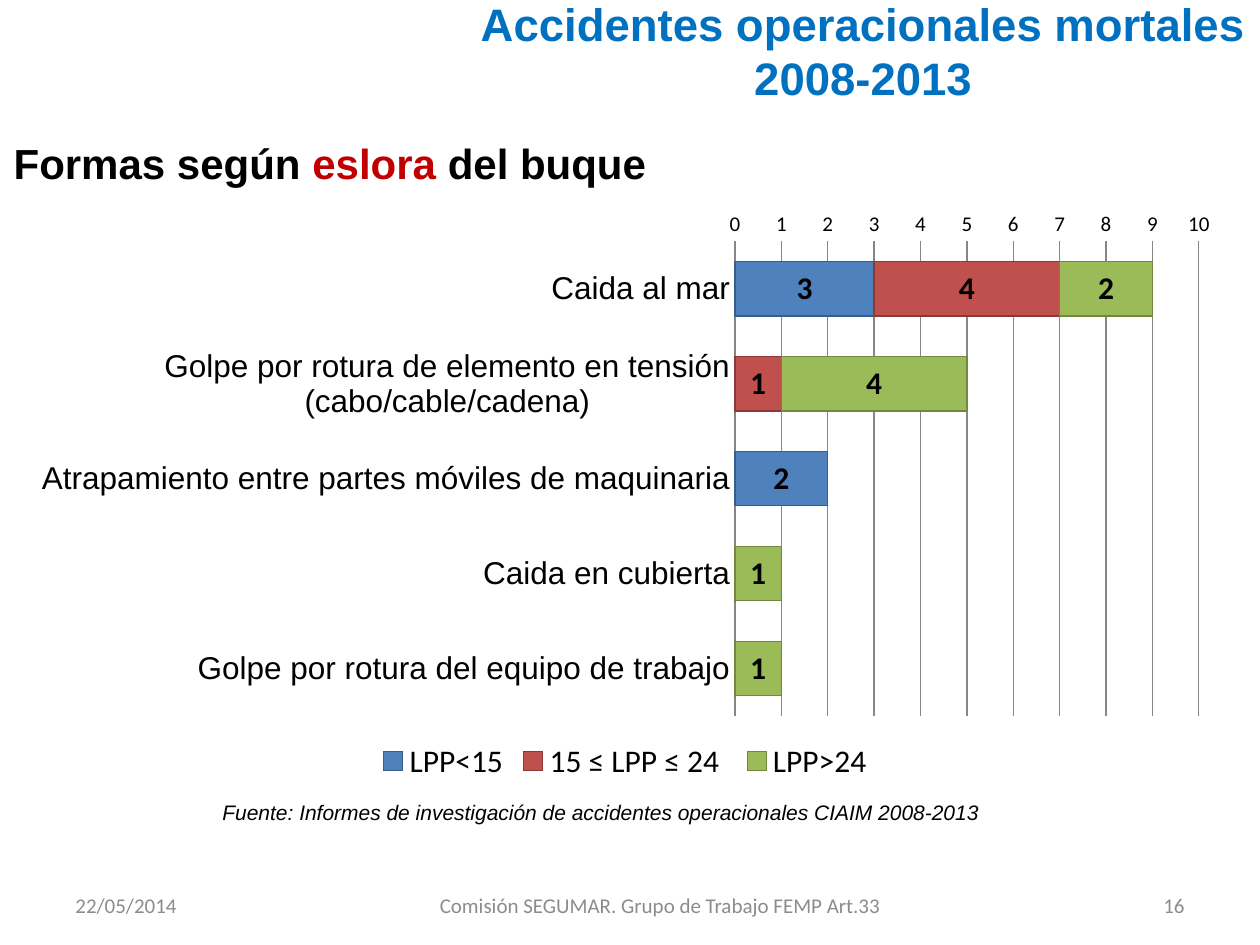
from lxml import etree
from pptx import Presentation
from pptx.chart.data import CategoryChartData
from pptx.dml.color import RGBColor
from pptx.enum.chart import XL_CHART_TYPE as ChartType, XL_LEGEND_POSITION as LegendPosition
from pptx.enum.chart import XL_TICK_MARK as TickMark
from pptx.enum.text import MSO_ANCHOR as Anchor, PP_ALIGN as Align
from pptx.oxml.ns import qn
from pptx.util import Pt

TITLE = ["Accidentes operacionales mortales", "2008-2013"]
SUBTITLE = [("Formas según ", "000000"), ("eslora", "C00000"), (" del buque", "000000")]
SOURCE = "Fuente: Informes de investigación de accidentes operacionales CIAIM 2008-2013"
# Footer: text, left, width, alignment
FOOTER = [
    ("22/05/2014", 36, 168, Align.LEFT),
    ("Comisión SEGUMAR. Grupo de Trabajo FEMP Art.33", 235.5, 283.5, Align.CENTER),
    ("16", 592.5, 91.5, Align.RIGHT),
]
CATEGORIES = [
    "Caida al mar",
    "Golpe por rotura de elemento en tensión (cabo/cable/cadena)",
    "Atrapamiento entre partes móviles de maquinaria",
    "Caida en cubierta",
    "Golpe por rotura del equipo de trabajo",
]
# Series: name, values, fill, outline
SERIES = [
    ("LPP<15", (3, 0, 2, 0, 0), "4F81BD", "385D8A"),
    ("15 ≤ LPP ≤ 24 ", (4, 1, 0, 0, 0), "C0504D", "8C3836"),
    ("LPP>24", (2, 4, 0, 1, 1), "9BBB59", "71893F"),
]
PLOT_AREA = {"x": 0.59, "y": 0.07, "w": 0.38, "h": 0.81}


def color(value):
    return RGBColor.from_string(value)


def set_font(font, size, name="Calibri", fill="000000", bold=False, italic=False):
    font.size, font.name = Pt(size), name
    font.bold, font.italic = bold, italic
    font.color.rgb = color(fill)


def add_text(slide, box, lines, size, name="Arial", align=Align.LEFT,
             anchor=Anchor.TOP, wrap=True, bold=False, italic=False):
    """Each line is a list of (text, colour) runs."""
    frame = slide.shapes.add_textbox(*map(Pt, box)).text_frame
    frame.word_wrap, frame.vertical_anchor = wrap, anchor
    for index, runs in enumerate(lines):
        paragraph = frame.add_paragraph() if index else frame.paragraphs[0]
        paragraph.alignment = align
        for text, fill in runs:
            run = paragraph.add_run()
            run.text = text
            set_font(run.font, size, name, fill, bold, italic)


def place_plot_area(chart):
    plot_area = chart._chartSpace.chart.plotArea
    for old in plot_area.findall(qn("c:layout")):
        plot_area.remove(old)
    layout = etree.Element(qn("c:layout"))
    manual = etree.SubElement(layout, qn("c:manualLayout"))
    settings = [("layoutTarget", "inner"), ("xMode", "edge"), ("yMode", "edge")]
    for tag, value in settings + list(PLOT_AREA.items()):
        etree.SubElement(manual, qn("c:" + tag)).set("val", str(value))
    plot_area.insert(0, layout)


def add_accident_chart(slide):
    data = CategoryChartData()
    data.categories = CATEGORIES
    for name, values, *_ in SERIES:
        data.add_series(name, values)
    box = map(Pt, (8.5, 114.5, 697.5, 335))
    chart = slide.shapes.add_chart(ChartType.BAR_STACKED, *box, data).chart
    set_font(chart.font, 10)
    chart.has_title = False
    place_plot_area(chart)

    # Bars and value labels; the number format hides zeros
    plot = chart.plots[0]
    plot.gap_width, plot.overlap, plot.vary_by_categories = 75, 100, False
    for series, (_, _, fill, outline) in zip(plot.series, SERIES):
        series.format.fill.solid()
        series.format.fill.fore_color.rgb = color(fill)
        series.format.line.color.rgb = color(outline)
        series.format.line.width = Pt(0.75)
        labels = series.data_labels
        labels.show_value = True
        labels.number_format, labels.number_format_is_linked = "0;;", False
        set_font(labels.font, 18, bold=True)

    # Axes
    categories, values = chart.category_axis, chart.value_axis
    categories.reverse_order = True
    values.minimum_scale, values.maximum_scale, values.major_unit = 0, 10, 1
    values.has_major_gridlines = True
    values.format.line.fill.background()
    for line in (values.major_gridlines.format.line, categories.format.line):
        line.color.rgb = color("868686")
        line.width = Pt(0.75)
    for axis, size, name in ((categories, 18, "Arial"), (values, 12, "Calibri")):
        axis.major_tick_mark = axis.minor_tick_mark = TickMark.NONE
        set_font(axis.tick_labels.font, size, name)

    # Legend
    chart.has_legend = True
    chart.legend.position = LegendPosition.BOTTOM
    chart.legend.include_in_layout = False
    set_font(chart.legend.font, 18)


def main():
    presentation = Presentation()
    presentation.slide_width, presentation.slide_height = Pt(720), Pt(540)
    slide = presentation.slides.add_slide(presentation.slide_layouts[6])

    # Headings
    add_text(slide, (263.5, -8, 459.5, 73.5), [[(line, "0070C0")] for line in TITLE],
             26, align=Align.CENTER, anchor=Anchor.MIDDLE, bold=True)
    add_text(slide, (0.75, 75, 379.5, 36), [SUBTITLE], 24, wrap=False, bold=True)

    add_accident_chart(slide)

    # Source and footer
    add_text(slide, (120, 453.5, 475, 21.5), [[(SOURCE, "000000")]], 12, italic=True)
    for text, left, width, align in FOOTER:
        add_text(slide, (left, 502.5, width, 29), [[(text, "8C8C8C")]], 12, "Calibri",
                 align, Anchor.MIDDLE)
    presentation.save("out.pptx")


if __name__ == "__main__":
    main()
